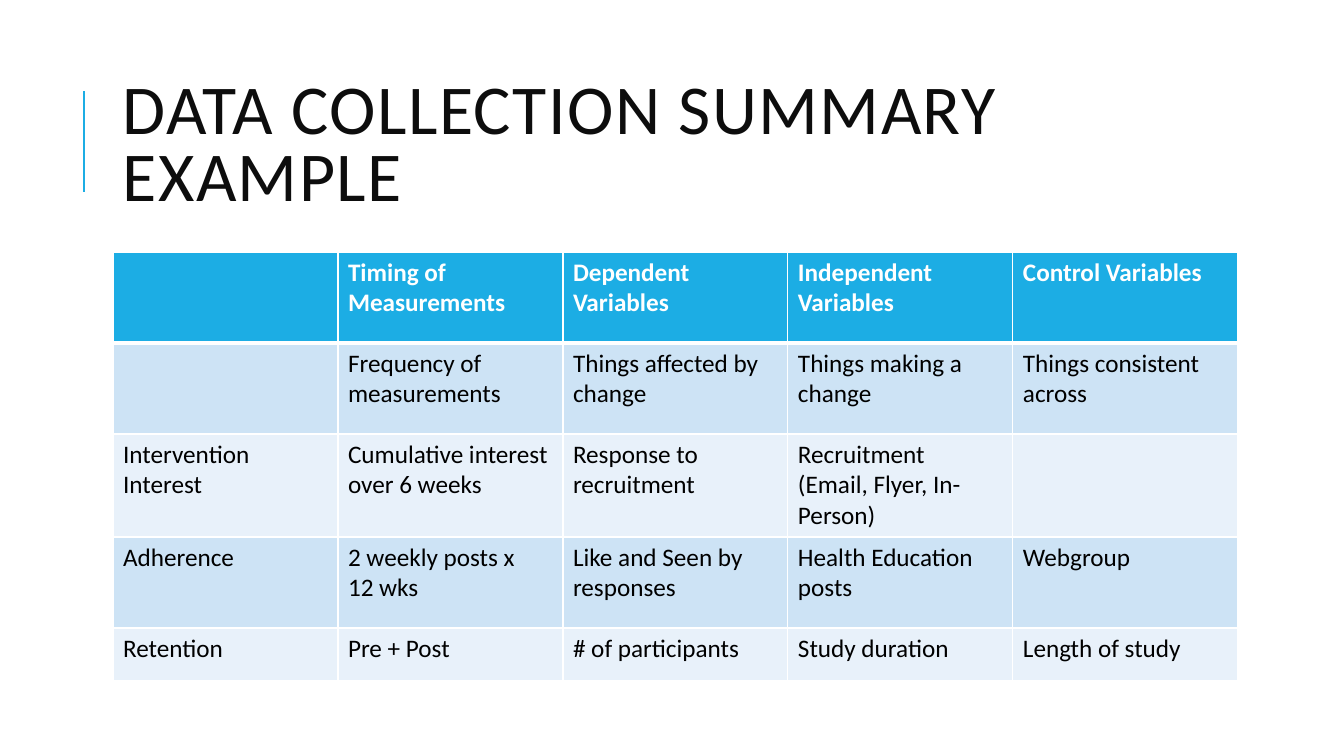
from dataclasses import dataclass

from lxml.etree import SubElement
from pptx import Presentation
from pptx.dml.color import RGBColor
from pptx.enum.shapes import MSO_CONNECTOR
from pptx.enum.text import MSO_ANCHOR
from pptx.oxml.ns import qn
from pptx.util import Pt

TITLE = "DATA COLLECTION SUMMARY EXAMPLE"
ROWS = [
    ["", "Timing of Measurements", "Dependent Variables", "Independent Variables", "Control Variables"],
    ["", "Frequency of measurements", "Things affected by change", "Things making a change",
     "Things consistent across"],
    ["Intervention Interest", "Cumulative interest over 6 weeks", "Response to recruitment",
     "Recruitment\n(Email, Flyer, In-Person)", ""],
    ["Adherence", "2 weekly posts x\n12 wks", "Like and Seen by responses", "Health Education posts",
     "Webgroup"],
    ["Retention", "Pre + Post", "# of participants", "Study duration", "Length of study"],
]

# Lengths in px
PAGE_SIZE = (1344, 756)
ACCENT_LINE = (84, 192, 84, 91)
TITLE_BOX = (113, 65, 1072, 165)
TABLE_CORNER = (113, 252)
COLUMN_WIDTH = 225
ROW_HEIGHTS = [91, 91, 103, 91, 53]
EMU_PER_PX = 914400 / 100.8


@dataclass(frozen=True)
class Theme:
    font: str = "Calibri"
    accent: str = "1CADE4"
    title: str = "0D0D0D"
    body: str = "000000"
    white: str = "FFFFFF"
    bands: tuple = ("CDE3F5", "E8F1FA")
    title_size: int = 50
    cell_size: int = 18
    rule: float = 1.5
    border: int = 1
    header_border: int = 3


THEME = Theme()


def px(*lengths):
    return [round(length * EMU_PER_PX) for length in lengths]


def style_text(frame, size, color, bold=False):
    for para in frame.paragraphs:
        for span in para.runs:
            span.font.name = THEME.font
            span.font.size = Pt(size)
            span.font.bold = bold
            span.font.color.rgb = RGBColor.from_string(color)


def add_border(cell, side, width):
    line = SubElement(cell._tc.get_or_add_tcPr(), qn(f"a:ln{side}"), w=str(Pt(width)))
    fill = SubElement(line, qn("a:solidFill"))
    SubElement(fill, qn("a:srgbClr"), val=THEME.white)


def add_accent_line(page):
    line = page.shapes.add_connector(MSO_CONNECTOR.STRAIGHT, *px(*ACCENT_LINE))
    line.line.color.rgb = RGBColor.from_string(THEME.accent)
    line.line.width = Pt(THEME.rule)
    SubElement(line._element.spPr, qn("a:effectLst"))


def add_title(page):
    frame = page.shapes.add_textbox(*px(*TITLE_BOX)).text_frame
    frame.word_wrap = True
    frame.vertical_anchor = MSO_ANCHOR.MIDDLE
    frame.text = TITLE
    para = frame.paragraphs[0]
    para.line_spacing = 0.8
    style_text(frame, THEME.title_size, THEME.title)
    para.runs[0].font._element.set("spc", "100")


def fill_cell(cell, text, row):
    header = row == 0
    widths = {
        "L": THEME.border,
        "R": THEME.border,
        "T": THEME.header_border if row == 1 else THEME.border,
        "B": THEME.header_border if header else THEME.border,
    }
    for side, width in widths.items():
        add_border(cell, side, width)
    cell.fill.solid()
    color = THEME.accent if header else THEME.bands[(row - 1) % 2]
    cell.fill.fore_color.rgb = RGBColor.from_string(color)
    cell.text_frame.text = text
    style_text(cell.text_frame, THEME.cell_size, THEME.white if header else THEME.body, header)


def add_summary_table(page):
    columns = len(ROWS[0])
    size = px(COLUMN_WIDTH * columns, sum(ROW_HEIGHTS))
    table = page.shapes.add_table(len(ROWS), columns, *px(*TABLE_CORNER), *size).table
    for column in table.columns:
        column.width = px(COLUMN_WIDTH)[0]
    for row, (texts, height) in enumerate(zip(ROWS, ROW_HEIGHTS)):
        table.rows[row].height = px(height)[0]
        for column, text in enumerate(texts):
            fill_cell(table.cell(row, column), text, row)


def main():
    deck = Presentation()
    deck.slide_width, deck.slide_height = px(*PAGE_SIZE)
    page = deck.slides.add_slide(deck.slide_layouts[6])
    add_accent_line(page)
    add_title(page)
    add_summary_table(page)
    deck.save("out.pptx")


if __name__ == "__main__":
    main()
